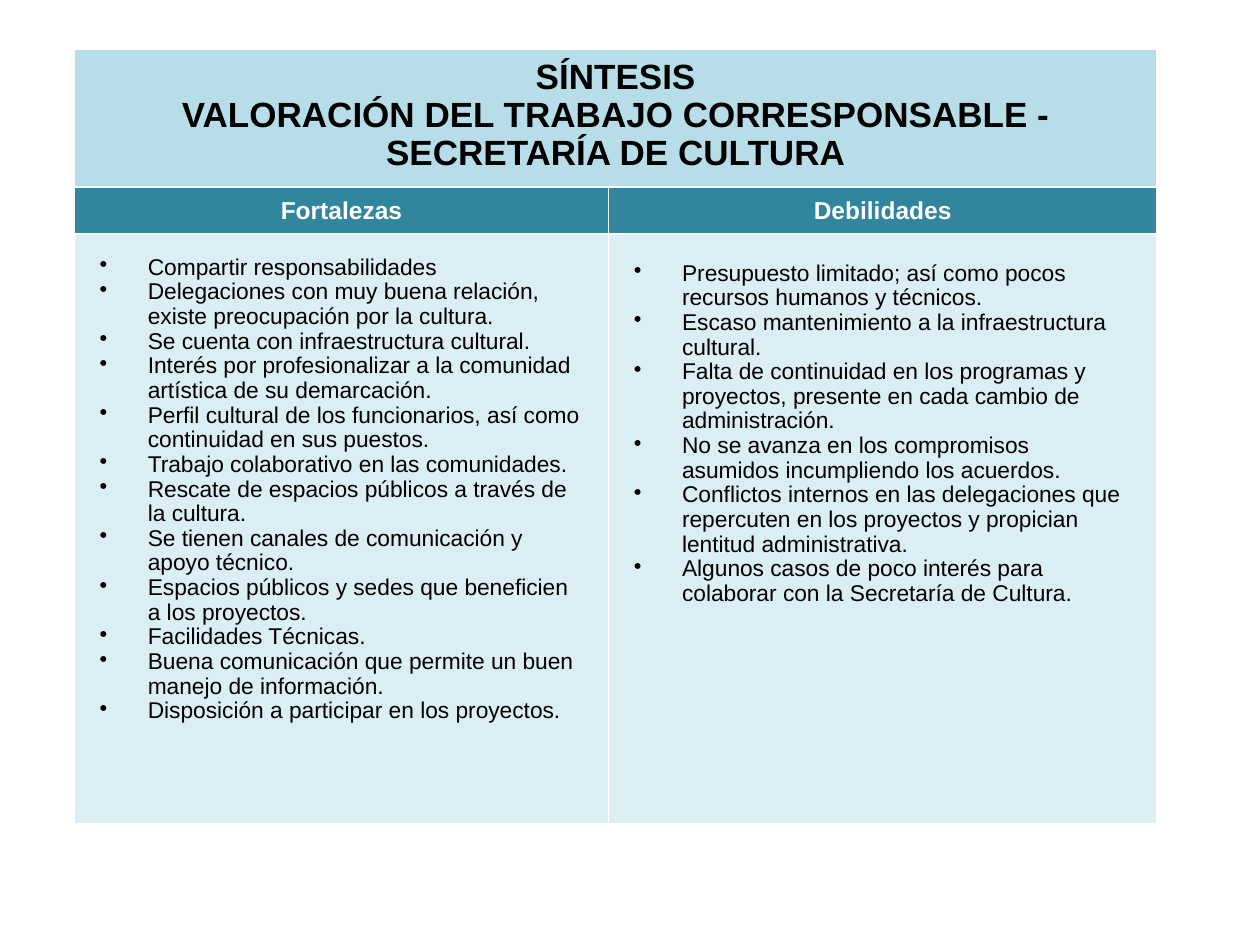
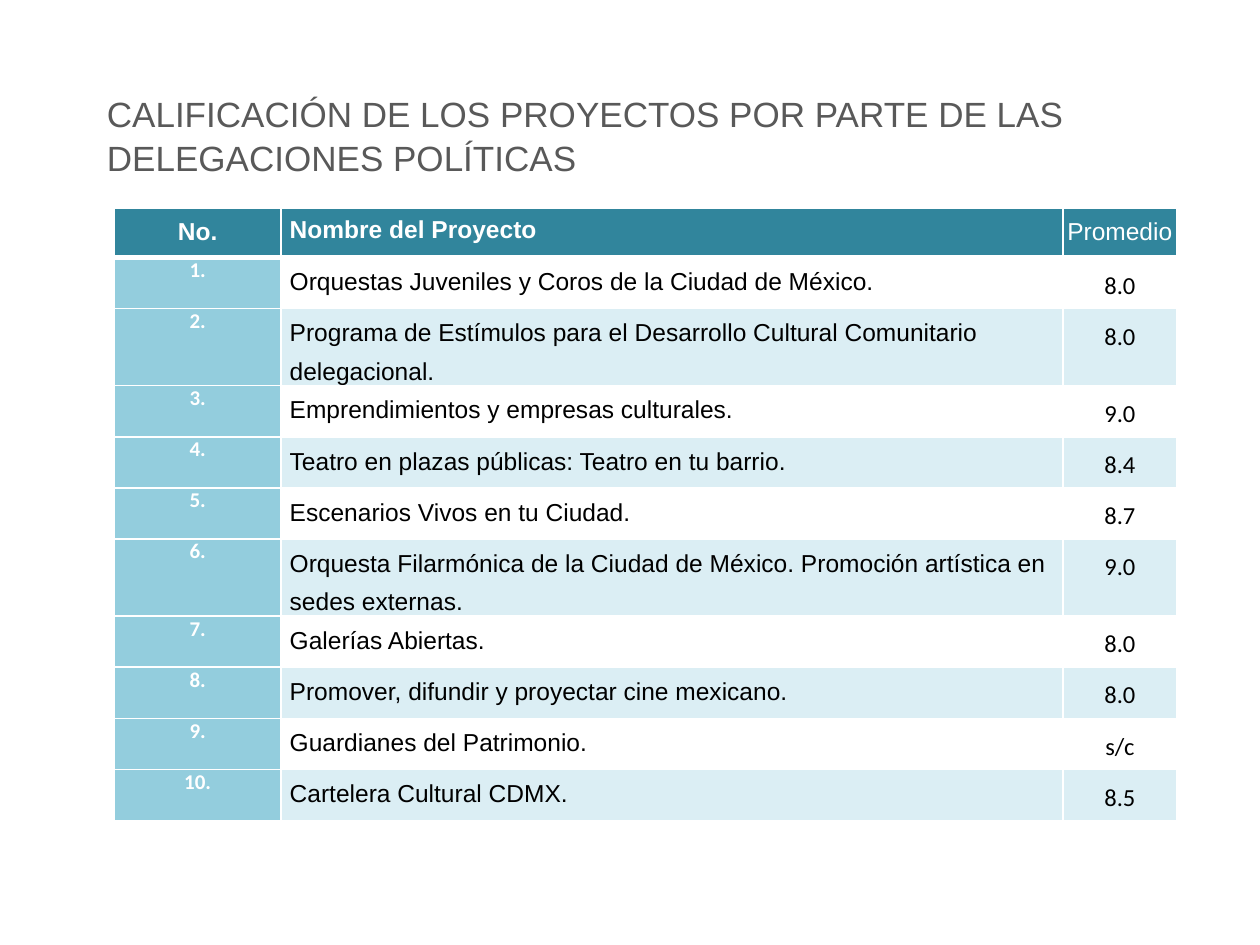
from dataclasses import dataclass

from lxml import etree
from pptx import Presentation
from pptx.dml.color import RGBColor
from pptx.enum.text import MSO_ANCHOR, MSO_AUTO_SIZE, PP_ALIGN
from pptx.oxml.ns import qn
from pptx.util import Cm, Pt

LEFT, CENTER = PP_ALIGN.LEFT, PP_ALIGN.CENTER
MIDDLE, NO_FIT = MSO_ANCHOR.MIDDLE, MSO_AUTO_SIZE.NONE
TITLE_ONLY, BLANK = 5, 6

SYNTHESIS_TITLE = (
    "SÍNTESIS",
    "VALORACIÓN DEL TRABAJO CORRESPONSABLE - SECRETARÍA DE CULTURA",
)
STRENGTHS = (
    "Compartir responsabilidades",
    "Delegaciones con muy buena relación, existe preocupación por la cultura.",
    "Se cuenta con infraestructura cultural.",
    "Interés por profesionalizar a la comunidad artística de su demarcación.",
    "Perfil cultural de los funcionarios, así como continuidad en sus puestos.",
    "Trabajo colaborativo en las comunidades.",
    "Rescate de espacios públicos a través de la cultura.",
    "Se tienen canales de comunicación y apoyo técnico.",
    "Espacios públicos y sedes que beneficien a los proyectos.",
    "Facilidades Técnicas.",
    "Buena comunicación que permite un buen manejo de información.",
    "Disposición a participar en los proyectos.",
)
WEAKNESSES = (
    "Presupuesto limitado; así como pocos recursos humanos y técnicos.",
    "Escaso mantenimiento a la infraestructura cultural.",
    "Falta de continuidad en los programas y proyectos, presente en cada cambio de administración.",
    "No se avanza en los compromisos asumidos incumpliendo los acuerdos.",
    "Conflictos internos en las delegaciones que repercuten en los proyectos y propician "
    "lentitud administrativa.",
    "Algunos casos de poco interés para colaborar con la Secretaría de Cultura.",
)
# heading, points, space above the points in cm
VALUATION = (("Fortalezas", STRENGTHS, 0.43), ("Debilidades", WEAKNESSES, 0.55))

RATING_TITLE = "CALIFICACIÓN DE LOS PROYECTOS POR PARTE DE LAS DELEGACIONES POLÍTICAS"
RATING_HEADINGS = ("No.", "Nombre del Proyecto", "Promedio")
RATINGS = (
    ("Orquestas Juveniles y Coros de la Ciudad de México.", "8.0"),
    ("Programa de Estímulos para el Desarrollo Cultural Comunitario delegacional.", "8.0"),
    ("Emprendimientos y empresas culturales.", "9.0"),
    ("Teatro en plazas públicas: Teatro en tu barrio.", "8.4"),
    ("Escenarios Vivos en tu Ciudad.", "8.7"),
    ("Orquesta Filarmónica de la Ciudad de México. Promoción artística en sedes externas.", "9.0"),
    ("Galerías Abiertas.", "8.0"),
    ("Promover, difundir y proyectar cine mexicano.", "8.0"),
    ("Guardianes del Patrimonio.", "s/c"),
    ("Cartelera Cultural CDMX.", "8.5"),
)
LINE_CAPACITY = 60  # characters of a project name that fit on one line


@dataclass(frozen=True)
class Theme:
    header: str = "31859C"
    banner: str = "B7DEE8"
    number: str = "93CDDD"
    tint: str = "DBEEF4"
    white: str = "FFFFFF"
    black: str = "000000"
    title: str = "595959"
    font: str = "Arial"
    figure_font: str = "Calibri"
    title_size: int = 20
    table_size: int = 14
    list_size: int = 13
    number_size: int = 12


THEME = Theme()


@dataclass(frozen=True)
class Style:
    size: int = THEME.table_size
    color: str = THEME.black
    bold: bool = False
    font: str = THEME.font
    align: PP_ALIGN = LEFT
    spacing: float = 1.0
    bullet: bool = False


BANNER = Style(THEME.title_size, bold=True, align=CENTER, spacing=0.97)
HEADING = Style(color=THEME.white, bold=True, align=CENTER)
POINT = Style(THEME.list_size, spacing=0.97, bullet=True)
NAME_HEADING = Style(color=THEME.white, bold=True, spacing=1.3)
SCORE_HEADING = Style(color=THEME.white, align=CENTER, spacing=1.3)
NUMBER = Style(THEME.number_size, THEME.white, True, THEME.figure_font, CENTER)
NAME = Style(spacing=1.4)
SCORE = Style(font=THEME.figure_font, align=CENTER, spacing=1.4)
PAGE_TITLE = Style(THEME.title_size, THEME.title, spacing=1.04)


def write(frame, lines, style):
    for index, line in enumerate(lines):
        para = frame.paragraphs[0] if index == 0 else frame.add_paragraph()
        if style.bullet:
            properties = para._p.get_or_add_pPr()
            properties.set("marL", str(Cm(0.97)))
            properties.set("indent", str(-Cm(0.97)))
            etree.SubElement(properties, qn("a:buChar"), char="•")
        para.alignment = style.align
        para.line_spacing = style.spacing
        span = para.add_run()
        span.text = line
        span.font.name = style.font
        span.font.size = Pt(style.size)
        span.font.bold = style.bold
        span.font.color.rgb = RGBColor.from_string(style.color)


def add_borders(cell, top, bottom):
    """Draw white cell edges; top and bottom are widths in points."""
    properties = cell._tc.get_or_add_tcPr()
    for tag, width in (("lnL", 1), ("lnR", 1), ("lnT", top), ("lnB", bottom)):
        line = etree.SubElement(properties, qn(f"a:{tag}"), w=str(Pt(width)))
        fill = etree.SubElement(line, qn("a:solidFill"))
        etree.SubElement(fill, qn("a:srgbClr"), val=THEME.white)


def fill_cell(cell, lines, style, color, side, top=0):
    """Write and paint a cell; side and top are its margins in cm."""
    cell.margin_left = cell.margin_right = Cm(side)
    cell.margin_top, cell.margin_bottom = Cm(top), 0
    cell.fill.solid()
    cell.fill.fore_color.rgb = RGBColor.from_string(color)
    write(cell.text_frame, lines, style)


def add_grid(page, left, top, widths, heights, header_edge=1):
    """Add a plain table with white borders, measured in cm."""
    frame = page.shapes.add_table(len(heights), len(widths), Cm(left), Cm(top),
                                  Cm(sum(widths)), Cm(sum(heights)))
    table = frame.table
    table.first_row = table.horz_banding = False
    for column, width in zip(table.columns, widths):
        column.width = Cm(width)
    for index, (row, height) in enumerate(zip(table.rows, heights)):
        row.height = Cm(height)
        for cell in row.cells:
            add_borders(cell, header_edge if index == 1 else 1,
                        header_edge if index == 0 else 1)
    return table


def add_synthesis(deck):
    page = deck.slides.add_slide(deck.slide_layouts[BLANK])
    table = add_grid(page, 1.5, 0.99, (10.77, 11.05), (2.78, 0.95, 11.89))
    table.cell(0, 0).merge(table.cell(0, 1))
    fill_cell(table.cell(0, 0), SYNTHESIS_TITLE, BANNER, THEME.banner, 0.13, 0.2)
    for column, (heading, points, space) in enumerate(VALUATION):
        fill_cell(table.cell(1, column), [heading], HEADING, THEME.header, 0.13, 0.2)
        fill_cell(table.cell(2, column), points, POINT, THEME.tint, 0.51, space)


def add_ratings(deck):
    page = deck.slides.add_slide(deck.slide_layouts[TITLE_ONLY])
    title = page.shapes.title
    title.left, title.top, title.width, title.height = Cm(1.9), Cm(1.32), Cm(20.6), Cm(2.79)
    frame = title.text_frame
    frame.auto_size, frame.word_wrap, frame.vertical_anchor = NO_FIT, True, MIDDLE
    write(frame, [RATING_TITLE], PAGE_TITLE)

    heights = [0.99] + [1.55 if len(name) > LINE_CAPACITY else 1.03 for name, _ in RATINGS]
    table = add_grid(page, 2.31, 4.2, (3.35, 15.77, 2.29), heights, header_edge=3)
    sides, tops = (0.18, 0.18, 0.03), (0, 0, 0.03)
    heading_styles = (HEADING, NAME_HEADING, SCORE_HEADING)
    for column, heading in enumerate(RATING_HEADINGS):
        fill_cell(table.cell(0, column), [heading], heading_styles[column], THEME.header,
                  sides[column], 0.2 if column == 0 else tops[column])
    for row, (name, score) in enumerate(RATINGS, start=1):
        band = THEME.white if row % 2 else THEME.tint
        parts = ((f"{row}.", NUMBER, THEME.number), (name, NAME, band), (score, SCORE, band))
        for column, (text, style, color) in enumerate(parts):
            fill_cell(table.cell(row, column), [text], style, color,
                      sides[column], tops[column])


def main():
    deck = Presentation()
    deck.slide_width, deck.slide_height = Cm(25.4), Cm(19.05)
    add_synthesis(deck)
    add_ratings(deck)
    deck.save("out.pptx")


if __name__ == "__main__":
    main()
